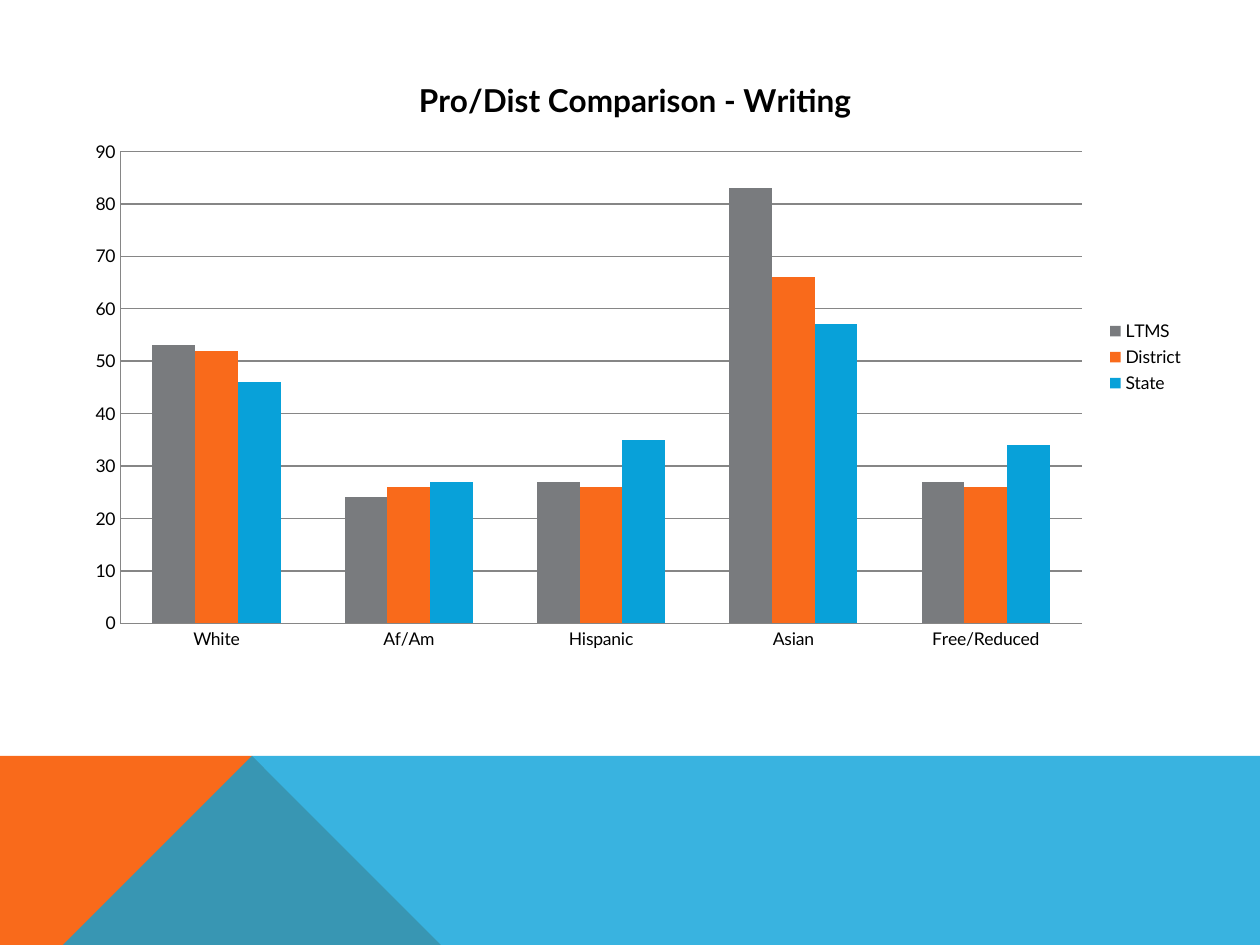
import pptx
import pptx.chart.data
import pptx.dml.color
import pptx.enum.chart
import pptx.oxml.ns
import pptx.util
from lxml import etree

Inches, Pt = pptx.util.Inches, pptx.util.Pt

COLORS = {"gray": "797B7E", "orange": "F96A1B", "blue": "08A1D9",
          "line": "868686", "text": "000000"}
FONT = "Lato"

# Content
TITLE = "Pro/Dist Comparison - Writing"
GROUPS = ["White", "Af/Am", "Hispanic", "Asian", "Free/Reduced"]
SERIES = [
    ("LTMS", [53, 24, 27, 83, 27], "gray"),
    ("District", [52, 26, 26, 66, 26], "orange"),
    ("State", [46, 27, 35, 57, 34], "blue"),
]
CHART_BOX = (0.58, 0.42, 8.92, 4.83)

# Footer bands: outline points, colour, opacity in percent
WIDTH, HEIGHT, BAND_TOP, PEAK = 10, 7.5, 5.52, 2.23
BANDS = [
    ([(0, HEIGHT), (0, BAND_TOP), (PEAK, BAND_TOP), (3.91, HEIGHT)], "orange", 100),
    ([(0, HEIGHT), (PEAK, BAND_TOP), (WIDTH, BAND_TOP), (WIDTH, HEIGHT)], "blue", 80),
]


def rgb(name):
    return pptx.dml.color.RGBColor.from_string(COLORS[name])


def style_font(font, size, bold=False):
    font.name, font.size, font.bold = FONT, Pt(size), bold
    font.color.rgb = rgb("text")


def style_line(line):
    line.color.rgb = rgb("line")
    line.width = Pt(0.75)


def add_band(slide, points, color, opacity):
    builder = slide.shapes.build_freeform(*points[0], scale=Inches(1))
    builder.add_line_segments(points[1:], close=True)
    band = builder.convert_to_shape()
    band.shadow.inherit = False
    band.fill.solid()
    band.fill.fore_color.rgb = rgb(color)
    band.line.fill.background()
    if opacity < 100:
        tag = pptx.oxml.ns.qn
        fill = band.element.spPr.find(tag("a:solidFill"))
        etree.SubElement(fill[0], tag("a:alpha"), val=str(opacity * 1000))


def add_comparison_chart(slide):
    data = pptx.chart.data.CategoryChartData()
    data.categories = GROUPS
    for name, values, _ in SERIES:
        data.add_series(name, values)
    kind = pptx.enum.chart.XL_CHART_TYPE.COLUMN_CLUSTERED
    chart = slide.shapes.add_chart(kind, *map(Inches, CHART_BOX), data).chart
    style_font(chart.font, 10)

    # Title and legend
    chart.has_title = True
    span = chart.chart_title.text_frame.paragraphs[0].add_run()
    span.text = TITLE
    style_font(span.font, 18, bold=True)
    chart.chart_title.include_in_layout = False
    chart.has_legend = True
    chart.legend.position = pptx.enum.chart.XL_LEGEND_POSITION.RIGHT
    chart.legend.include_in_layout = False

    # Axes
    for axis in (chart.category_axis, chart.value_axis):
        axis.major_tick_mark = pptx.enum.chart.XL_TICK_MARK.NONE
        axis.minor_tick_mark = pptx.enum.chart.XL_TICK_MARK.NONE
        style_line(axis.format.line)
    scale = chart.value_axis
    scale.minimum_scale, scale.maximum_scale, scale.major_unit = 0, 90, 10
    scale.has_major_gridlines = True
    style_line(scale.major_gridlines.format.line)

    # Columns
    plot = chart.plots[0]
    plot.gap_width, plot.overlap = 150, 0
    plot.vary_by_categories = False
    for series, (_, _, color) in zip(plot.series, SERIES):
        series.format.fill.solid()
        series.format.fill.fore_color.rgb = rgb(color)


def main():
    deck = pptx.Presentation()
    deck.slide_width, deck.slide_height = Inches(WIDTH), Inches(HEIGHT)
    slide = deck.slides.add_slide(deck.slide_layouts.get_by_name("Blank"))
    for band in BANDS:
        add_band(slide, *band)
    add_comparison_chart(slide)
    deck.save("out.pptx")


if __name__ == "__main__":
    main()
